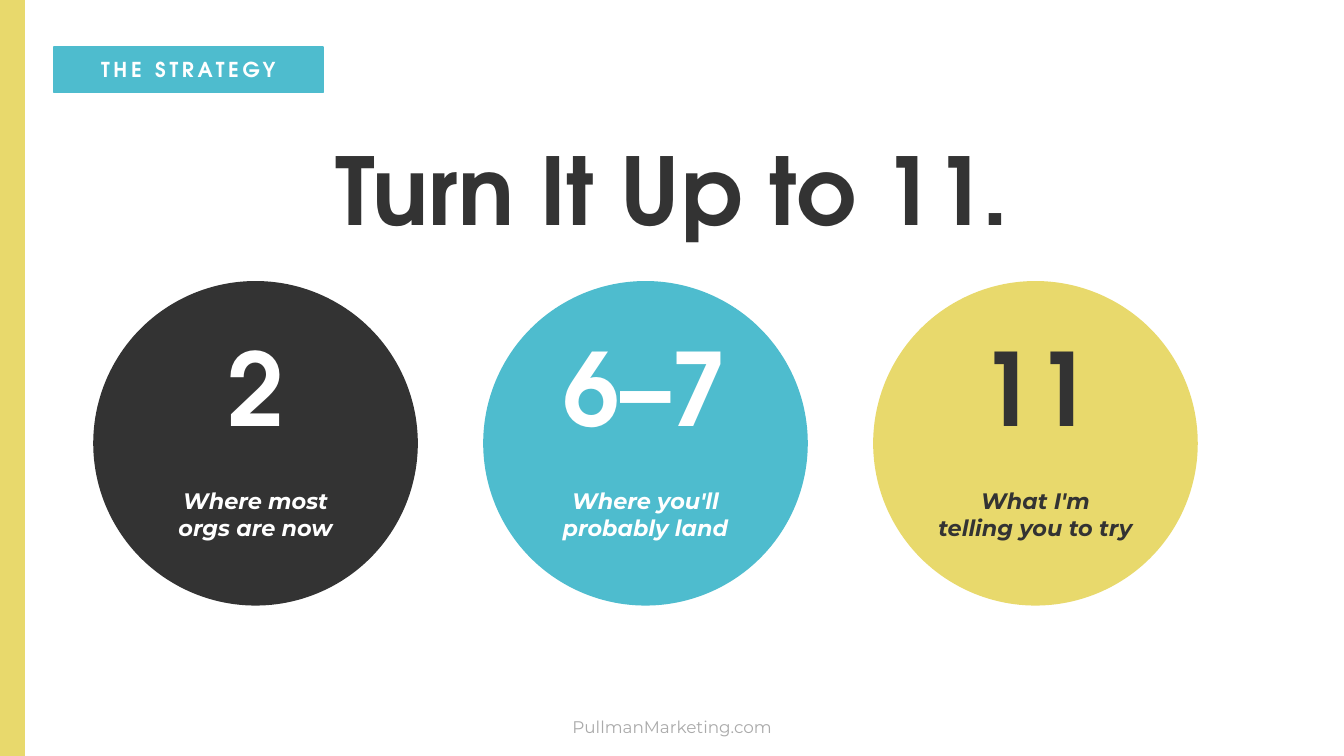
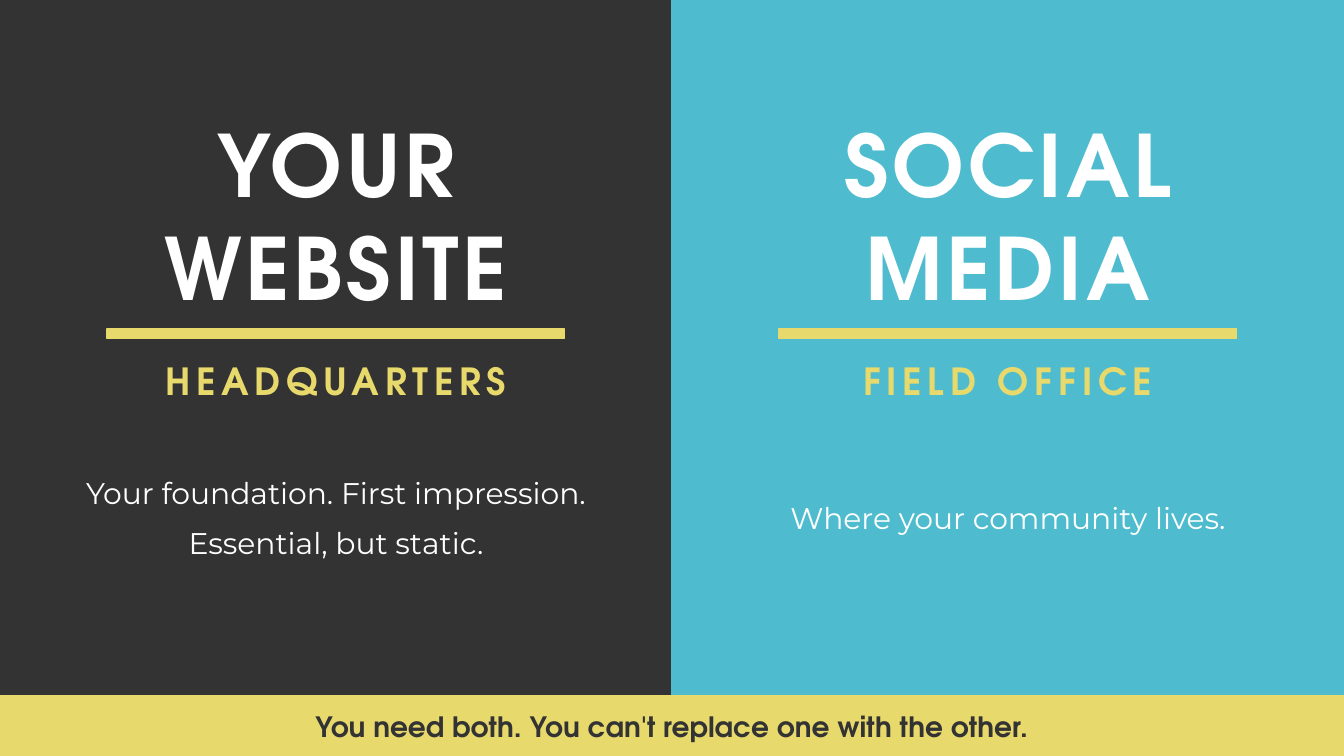
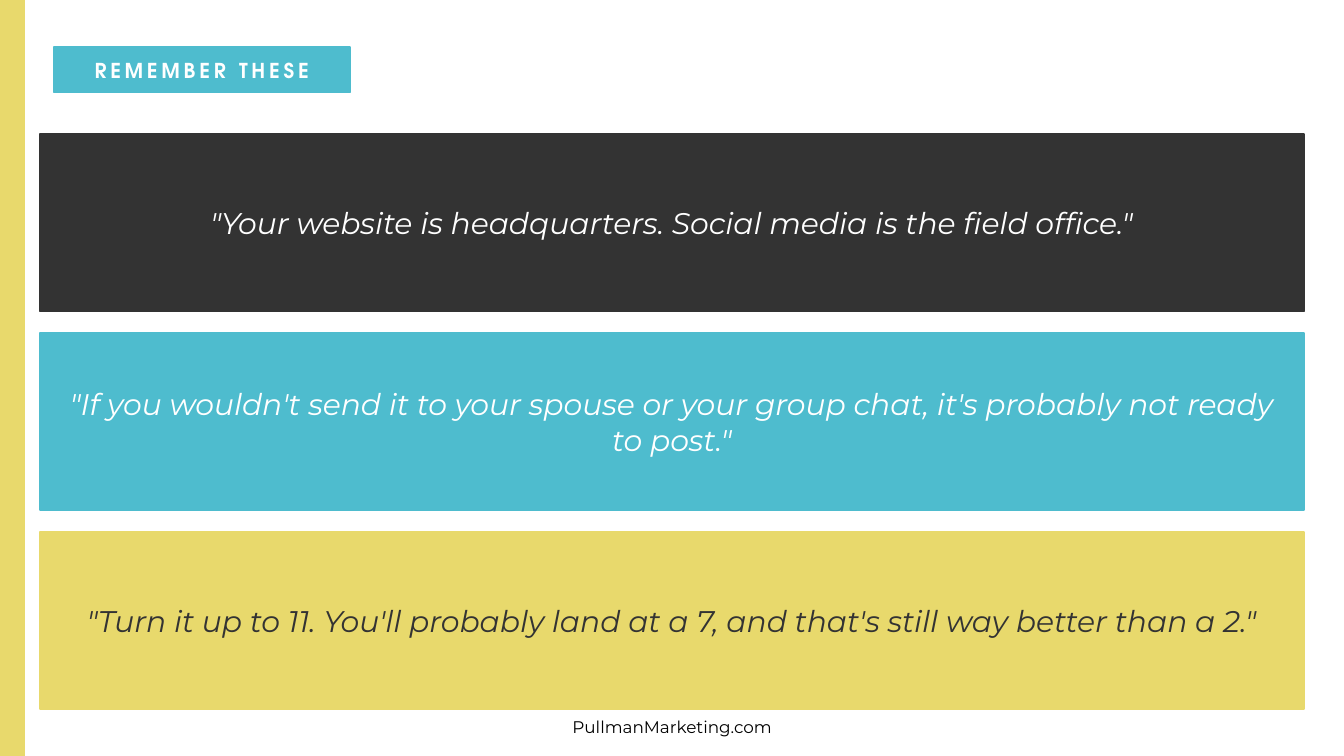
"""Build three slides on website and social media strategy."""
from pptx import Presentation
from pptx.dml.color import RGBColor
from pptx.enum.shapes import MSO_SHAPE
from pptx.enum.text import MSO_ANCHOR, MSO_AUTO_SIZE, PP_ALIGN
from pptx.util import Cm, Pt

RECT, OVAL = MSO_SHAPE.RECTANGLE, MSO_SHAPE.OVAL
MIDDLE, CENTER, NO_FIT = MSO_ANCHOR.MIDDLE, PP_ALIGN.CENTER, MSO_AUTO_SIZE.NONE
DARK, TEAL, GOLD = "333333", "4EBCCE", "E8D96C"
WHITE, GREY, BLACK = "FFFFFF", "AAAAAA", "000000"
HEAD, BODY = "TeX Gyre Adventor", "Montserrat"
WIDE, HIGH = 25.4, 14.29
HALF = WIDE / 2
SITE = "PullmanMarketing.com"

LEVELS = [
    ("2", "Where most\norgs are now", DARK, WHITE),
    ("6–7", "Where you'll\nprobably land", TEAL, WHITE),
    ("11", "What I'm\ntelling you to try", GOLD, DARK),
]
PANELS = [
    ("YOUR\nWEBSITE", "HEADQUARTERS",
     "Your foundation. First impression.\nEssential, but static.", DARK),
    ("SOCIAL\nMEDIA", "FIELD OFFICE", "Where your community lives.", TEAL),
]
QUOTES = [
    ('"Your website is headquarters. Social media is the field office."', DARK, WHITE),
    ('"If you wouldn\'t send it to your spouse or your group chat, '
     'it\'s probably not ready to post."', TEAL, WHITE),
    ('"Turn it up to 11. You\'ll probably land at a 7, '
     'and that\'s still way better than a 2."', GOLD, DARK),
]


def rgb(code):
    return RGBColor.from_string(code)


def block(slide, box, color, kind=RECT):
    shape = slide.shapes.add_shape(kind, *map(Cm, box))
    shape.shadow.inherit = False
    shape.fill.solid()
    shape.fill.fore_color.rgb = rgb(color)
    shape.line.color.rgb = rgb(color)
    shape.line.width = Pt(1)


def style(frame, words, size, color, face=BODY, bold=False, slant=False, track=0, lead=None):
    frame.text = words
    frame.word_wrap = True
    frame.auto_size = NO_FIT
    frame.vertical_anchor = MIDDLE
    frame.margin_left = frame.margin_right = frame.margin_top = frame.margin_bottom = 0
    for para in frame.paragraphs:
        para.alignment = CENTER
        if lead:
            para.line_spacing = lead
        for run in para.runs:
            font = run.font
            font.name, font.size = face, Pt(size)
            font.bold, font.italic = bold, slant
            font.color.rgb = rgb(color)
            if track:
                run._r.get_or_add_rPr().set("spc", str(track * 100))


def label(slide, box, words, size, color, **look):
    text = slide.shapes.add_textbox(*map(Cm, box))
    style(text.text_frame, words, size, color, **look)


def title(slide, box, words, size, color, **look):
    shape = slide.shapes.title
    shape.left, shape.top, shape.width, shape.height = map(Cm, box)
    style(shape.text_frame, words, size, color, face=HEAD, bold=True, **look)
    shape.element.getparent().append(shape.element)


def frame(slide, width, color):
    """Draw the side band, tag and footer, and return the tag box."""
    tag = (1.02, 0.89, width, 0.86)
    block(slide, (0, 0, 0.46, HIGH), GOLD)
    block(slide, tag, TEAL)
    label(slide, (0, 13.41, WIDE, 0.66), SITE, 9, color)
    return tag


def levels(slide):
    tag = frame(slide, 5.08, GREY)
    label(slide, tag, "THE STRATEGY", 11, WHITE, face=HEAD, bold=True, track=2)
    title(slide, (1.02, 2.29, 23.37, 2.54), "Turn It Up to 11.", 50, DARK)
    top, size = 5.33, 6.1
    for i, (score, note, fill, ink) in enumerate(LEVELS):
        left = 1.78 + i * 7.37
        block(slide, (left, top, size, size), fill, OVAL)
        label(slide, (left, top, size, 3.94), score, 54, ink, face=HEAD, bold=True)
        label(slide, (left, 8.89, size, 1.65), note, 12, ink, bold=True, slant=True)


def panels(slide):
    for i, (name, role, note, fill) in enumerate(PANELS):
        left = i * HALF
        block(slide, (left, 0, HALF, HIGH), fill)
        label(slide, (left + 0.76, 2.03, 11.18, 4.06), name, 46, WHITE,
              face=HEAD, bold=True, track=2)
        block(slide, (left + 2.03, 6.22, 8.64, 0.18), GOLD)
        label(slide, (left + 0.76, 6.55, 11.18, 1.27), role, 20, GOLD,
              face=HEAD, bold=True, track=3)
        label(slide, (left + 1.02, 8.13, 10.67, 3.05), note, 16, WHITE, lead=1.4)
    band = (0, 13.16, WIDE, 1.14)
    block(slide, band, GOLD)
    title(slide, band, "You need both. You can't replace one with the other.", 15, DARK)


def quotes(slide):
    tag = frame(slide, 5.59, BLACK)
    title(slide, tag, "REMEMBER THESE", 11, WHITE, track=2)
    for i, (words, fill, ink) in enumerate(QUOTES):
        top = 2.54 + i * 3.76
        block(slide, (0.76, top, 23.88, 3.35), fill)
        label(slide, (1.27, top + 0.15, 22.86, 3.05), words, 16, ink, slant=True)


def main():
    deck = Presentation()
    deck.slide_width, deck.slide_height = Cm(WIDE), Cm(HIGH)
    for build in (levels, panels, quotes):
        build(deck.slides.add_slide(deck.slide_layouts[5]))
    deck.save("out.pptx")


if __name__ == "__main__":
    main()
